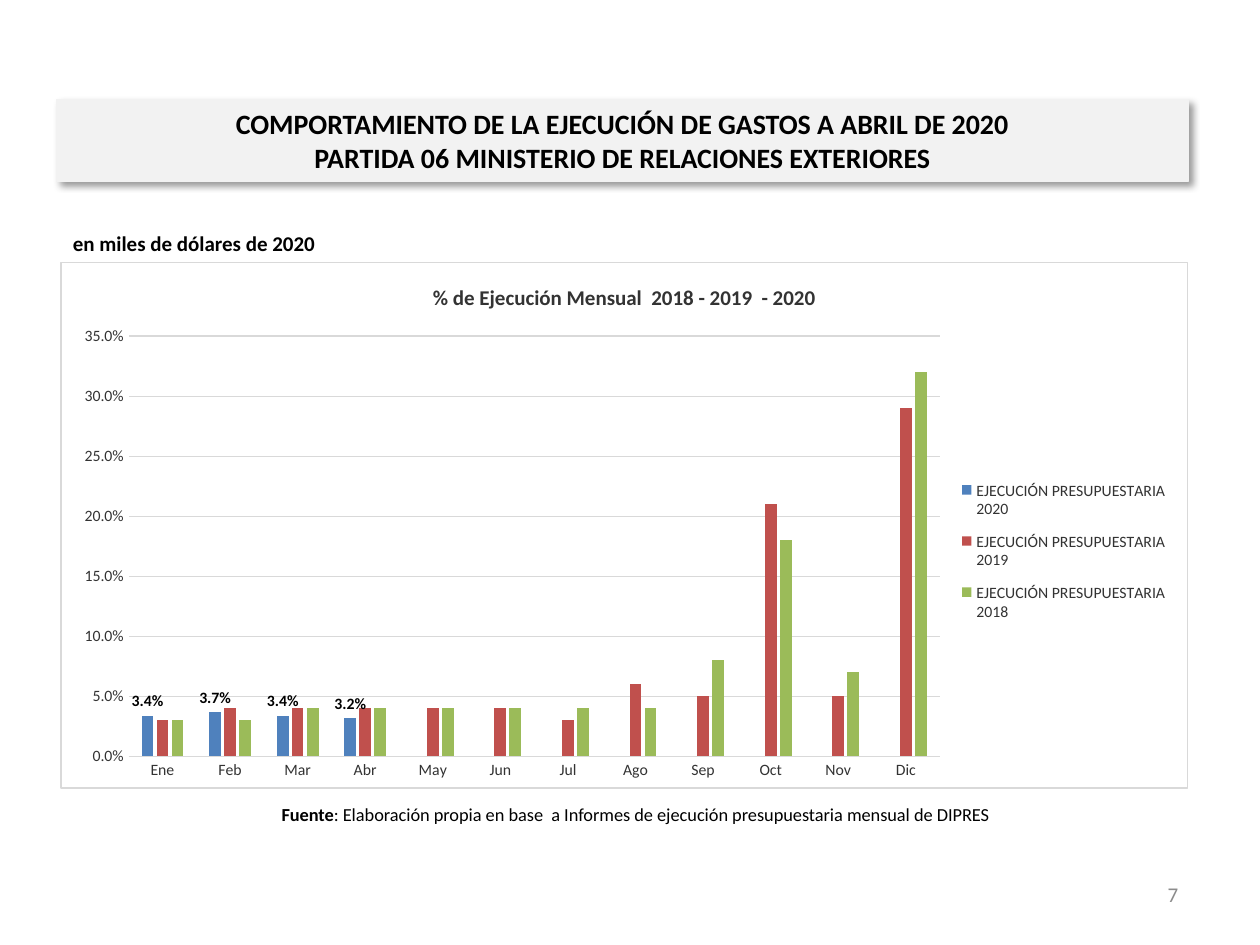
import dataclasses

import pptx
import pptx.chart.data
import pptx.dml.color
import pptx.enum.chart
import pptx.enum.text
import pptx.oxml
import pptx.oxml.ns
import pptx.util

Inches = pptx.util.Inches
Pt = pptx.util.Pt
ALIGN = pptx.enum.text.PP_ALIGN
MIDDLE = pptx.enum.text.MSO_ANCHOR.MIDDLE
XL = pptx.enum.chart


@dataclasses.dataclass(frozen=True)
class Theme:
    """Colours and type sizes of the slide."""
    font: str = "Calibri"
    ink: str = "000000"
    grey: str = "333333"
    muted: str = "8C8C8C"
    panel: str = "F2F2F2"
    rule: str = "D9D9D9"
    white: str = "FFFFFF"
    series: tuple = ("4F81BD", "C0504D", "9BBB59")
    title: float = 16
    body: float = 12
    source: float = 10.5
    chart: float = 10
    small: float = 9


THEME = Theme()
MONTHS = "Ene Feb Mar Abr May Jun Jul Ago Sep Oct Nov Dic".split()
EXECUTION = {
    2020: (0.034, 0.037, 0.034, 0.032) + (None,) * 8,
    2019: (0.03, 0.04, 0.04, 0.04, 0.04, 0.04, 0.03, 0.06, 0.05, 0.21, 0.05, 0.29),
    2018: (0.03, 0.03, 0.04, 0.04, 0.04, 0.04, 0.04, 0.04, 0.08, 0.18, 0.07, 0.32),
}


def rgb(value):
    """Turn a hex string into a colour."""
    return pptx.dml.color.RGBColor.from_string(value)


def apply(obj, formats):
    """Set the attributes of an object from a dict."""
    for name, value in formats.items():
        setattr(obj, name, value)


def set_font(font, size, color=THEME.ink, bold=False):
    """Format a font."""
    apply(font, {"name": THEME.font, "size": Pt(size), "bold": bold})
    font.color.rgb = rgb(color)


def set_line(line, color):
    """Give a line its colour and the common width."""
    line.color.rgb = rgb(color)
    line.width = Pt(0.75)


def parse_xml(tag, body):
    """Build an element with the drawing and chart namespaces."""
    ns = pptx.oxml.ns.nsdecls("a", "c")
    return pptx.oxml.parse_xml(f"<{tag} {ns}>{body}</{tag}>")


def add_title(slide, text, box):
    """Format the title placeholder as a shaded panel with a shadow."""
    sp = slide.shapes.title
    apply(sp, dict(zip(("left", "top", "width", "height"), map(Inches, box))))
    sp.fill.solid()
    sp.fill.fore_color.rgb = rgb(THEME.panel)
    set_line(sp.line, THEME.panel)
    sp._element.spPr.append(parse_xml(
        "a:effectLst",
        '<a:outerShdw blurRad="50800" dist="38100" dir="2700000" algn="tl" '
        'rotWithShape="0"><a:srgbClr val="000000"><a:alpha val="40000"/>'
        "</a:srgbClr></a:outerShdw>"))
    tf = sp.text_frame
    tf.text = text
    apply(tf, {"word_wrap": True, "vertical_anchor": MIDDLE,
               "auto_size": pptx.enum.text.MSO_AUTO_SIZE.NONE})
    p = tf.paragraphs[0]
    apply(p, {"alignment": ALIGN.CENTER, "line_spacing": 1.0, "space_before": Pt(0)})
    for r in p.runs:
        set_font(r.font, THEME.title, bold=True)


def add_text(slide, box, runs, size, color=THEME.ink, align=ALIGN.LEFT, **frame):
    """Add a text box of (text, bold) runs."""
    tf = slide.shapes.add_textbox(*map(Inches, box)).text_frame
    apply(tf, {"word_wrap": True, **frame})
    p = tf.paragraphs[0]
    p.alignment = align
    for text, bold in runs:
        r = p.add_run()
        r.text = text
        set_font(r.font, size, color, bold)


def format_axes(chart):
    """Format the category and value axes."""
    for axis in (chart.category_axis, chart.value_axis):
        apply(axis, {"major_tick_mark": XL.XL_TICK_MARK.NONE,
                     "minor_tick_mark": XL.XL_TICK_MARK.NONE})
        set_font(axis.tick_labels.font, THEME.small, THEME.grey)
    set_line(chart.category_axis.format.line, THEME.rule)
    axis = chart.value_axis
    apply(axis, {"minimum_scale": 0, "maximum_scale": 0.35, "major_unit": 0.05})
    apply(axis.tick_labels, {"number_format": "0.0%", "number_format_is_linked": False})
    axis.format.line.fill.background()
    set_line(axis.major_gridlines.format.line, THEME.rule)


def format_series(plot):
    """Colour the series and label the first one."""
    apply(plot, {"gap_width": 219, "overlap": -27, "vary_by_categories": False})
    for series, color in zip(plot.series, THEME.series):
        series.format.fill.solid()
        series.format.fill.fore_color.rgb = rgb(color)
    labels = plot.series[0].data_labels
    apply(labels, {"show_value": True, "number_format": "0.0%",
                   "number_format_is_linked": False,
                   "position": XL.XL_LABEL_POSITION.OUTSIDE_END})
    set_font(labels.font, THEME.small, bold=True)


def place(parent, index, box, target=""):
    """Fix a part of the chart at fractions of the chart area."""
    for old in parent.findall(pptx.oxml.ns.qn("c:layout")):
        parent.remove(old)
    sizes = "".join(f'<c:{key} val="{value}"/>' for key, value in zip("xywh", box))
    parent.insert(index, parse_xml(
        "c:layout", f'<c:manualLayout>{target}<c:xMode val="edge"/>'
        f'<c:yMode val="edge"/>{sizes}</c:manualLayout>'))


def format_area(chart):
    """Place plot and legend and give the chart its background and border."""
    root = chart._chartSpace.chart
    place(root.plotArea, 0, (0.06, 0.14, 0.72, 0.8), '<c:layoutTarget val="inner"/>')
    place(chart.legend._element, 1, (0.79, 0.39, 0.2, 0.32))
    fill = '<a:solidFill><a:srgbClr val="{}"/></a:solidFill>'
    root.addnext(parse_xml(
        "c:spPr", fill.format(THEME.white)
        + f'<a:ln w="{Pt(0.75)}">{fill.format(THEME.rule)}</a:ln>'))


def add_chart(slide, box, title):
    """Add the clustered columns of monthly execution."""
    data = pptx.chart.data.CategoryChartData(number_format="0.0%")
    data.categories = MONTHS
    for year, values in EXECUTION.items():
        data.add_series(f"EJECUCIÓN PRESUPUESTARIA {year}", values)
    chart = slide.shapes.add_chart(
        XL.XL_CHART_TYPE.COLUMN_CLUSTERED, *map(Inches, box), data).chart
    set_font(chart.font, THEME.chart)
    tf = chart.chart_title.text_frame
    tf.text = title
    set_font(tf.paragraphs[0].runs[0].font, THEME.body, THEME.grey, True)
    chart.has_legend = True
    apply(chart.legend, {"position": XL.XL_LEGEND_POSITION.RIGHT,
                         "include_in_layout": False})
    set_font(chart.legend.font, THEME.small, THEME.grey)
    format_axes(chart)
    format_series(chart.plots[0])
    format_area(chart)


def main():
    """Build and save the slide."""
    prs = pptx.Presentation()
    apply(prs, {"slide_width": Inches(10), "slide_height": Inches(7.5)})
    slide = prs.slides.add_slide(prs.slide_layouts.get_by_name("Title Only"))
    add_text(slide, (7.12, 6.9, 2.33, 0.4), [("7", False)], THEME.body,
             THEME.muted, ALIGN.RIGHT, vertical_anchor=MIDDLE)
    add_title(slide, "COMPORTAMIENTO DE LA EJECUCIÓN DE GASTOS A ABRIL DE 2020\v"
              "PARTIDA 06 MINISTERIO DE RELACIONES EXTERIORES", (0.45, 0.79, 8.98, 0.65))
    add_text(slide, (0.48, 1.78, 2.15, 0.3), [("en miles de dólares de 2020", True)],
             THEME.body, word_wrap=False)
    add_text(slide, (0.45, 6.26, 9.19, 0.4),
             [("Fuente", True), (": Elaboración propia en base  a Informes de "
                                 "ejecución presupuestaria mensual de DIPRES", False)],
             THEME.source, align=ALIGN.CENTER, vertical_anchor=MIDDLE)
    add_chart(slide, (0.48, 2.08, 8.95, 4.18), "% de Ejecución Mensual  2018 - 2019  - 2020")
    prs.save("out.pptx")


if __name__ == "__main__":
    main()
